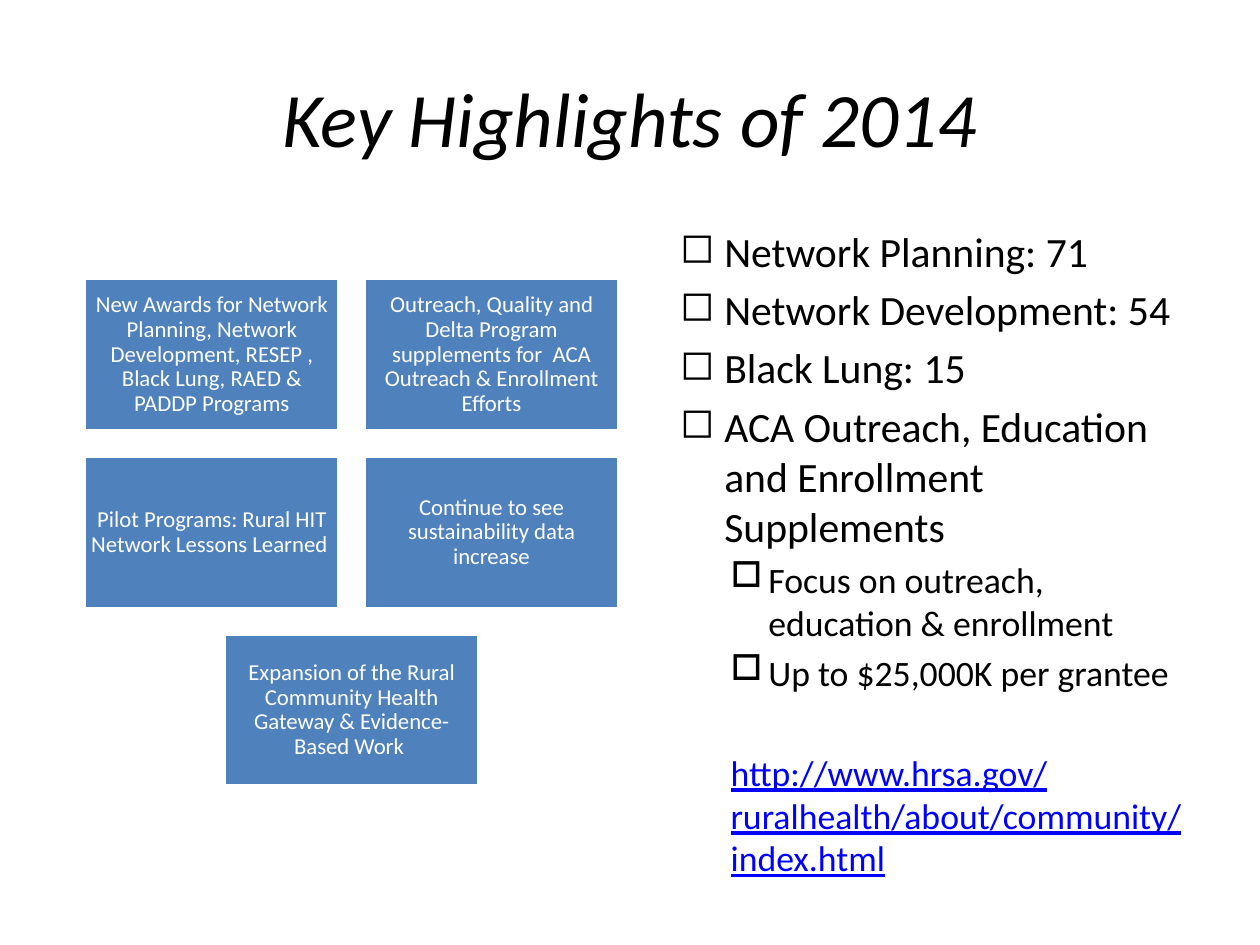
from dataclasses import dataclass

from lxml import etree
from pptx import Presentation
from pptx.dml.color import RGBColor
from pptx.enum import shapes, text
from pptx.oxml import ns
from pptx.util import Inches, Pt

BLACK = RGBColor(0x00, 0x00, 0x00)
WHITE = RGBColor(0xFF, 0xFF, 0xFF)
BLUE = RGBColor(0x4F, 0x81, 0xBD)
LINK_BLUE = RGBColor(0x00, 0x00, 0xFF)

BOX_WIDTH, BOX_HEIGHT, BOX_GAP = 2.02, 1.21, 0.2
GRID_LEFT, GRID_TOP, GRID_COLUMNS = 0.67, 2.21, 2
BOX_INSET = 0.05


@dataclass(frozen=True)
class Level:
    size: float
    margin: float
    hanging: float
    before: float
    bullet: str = ""
    color: RGBColor = BLACK
    underline: bool = False


@dataclass(frozen=True)
class Item:
    wording: str
    level: Level


MAIN = Level(23.8, 0.35, 0.35, 4.8, "◻")
DETAIL = Level(20.4, 0.7, 0.3, 4.1, "□")
ADDRESS = Level(20.4, 0.4, 0, 32.6, color=LINK_BLUE, underline=True)

HIGHLIGHTS = [
    "New Awards for Network Planning, Network Development, RESEP , "
    "Black Lung, RAED & PADDP Programs",
    "Outreach, Quality and Delta Program supplements for  ACA "
    "Outreach & Enrollment Efforts",
    "Pilot Programs: Rural HIT Network Lessons Learned  ",
    "Continue to see sustainability data increase",
    "Expansion of the Rural Community Health Gateway & Evidence-Based Work ",
]

AWARDS = [
    Item("Network Planning: 71", MAIN),
    Item("Network Development: 54", MAIN),
    Item("Black Lung: 15", MAIN),
    Item("ACA Outreach, Education and Enrollment Supplements", MAIN),
    Item("Focus on outreach, education & enrollment", DETAIL),
    Item("Up to $25,000K per grantee", DETAIL),
    Item("http://www.hrsa.gov/ruralhealth/about/community/index.html", ADDRESS),
]


def write(paragraph, wording: str, *, size: float, color: RGBColor = BLACK,
          align=text.PP_ALIGN.LEFT, italic: bool = False,
          underline: bool = False, spacing: float = 1.0,
          before: float = 0) -> None:
    paragraph.alignment = align
    paragraph.line_spacing = spacing
    paragraph.space_before = Pt(before)
    run = paragraph.add_run()
    run.text = wording
    run.font.name = "Calibri"
    run.font.size = Pt(size)
    run.font.color.rgb = color
    run.font.italic = italic
    run.font.underline = underline


def indent(paragraph, level: Level) -> None:
    properties = paragraph._p.get_or_add_pPr()
    properties.set("marL", str(Inches(level.margin)))
    properties.set("indent", str(-Inches(level.hanging)))
    if level.bullet:
        bullet = etree.SubElement(properties, ns.qn("a:buChar"))
        bullet.set("char", level.bullet)


def place_title(slide) -> None:
    heading = slide.shapes.title
    heading.left, heading.top = Inches(0.5), Inches(0.3)
    heading.width, heading.height = Inches(9), Inches(1.25)
    frame = heading.text_frame
    frame.vertical_anchor = text.MSO_ANCHOR.MIDDLE
    write(frame.paragraphs[0], "Key Highlights of 2014", size=44,
          align=text.PP_ALIGN.CENTER, italic=True)


def draw_highlight(slide, wording: str, left: float, top: float) -> None:
    box = slide.shapes.add_shape(
        shapes.MSO_SHAPE.RECTANGLE, Inches(left), Inches(top),
        Inches(BOX_WIDTH), Inches(BOX_HEIGHT))
    box.shadow.inherit = False
    box.fill.solid()
    box.fill.fore_color.rgb = BLUE
    box.line.color.rgb = WHITE
    box.line.width = Pt(2)
    frame = box.text_frame
    frame.word_wrap = True
    frame.vertical_anchor = text.MSO_ANCHOR.MIDDLE
    frame.margin_left = frame.margin_right = Inches(BOX_INSET)
    frame.margin_top = frame.margin_bottom = Inches(BOX_INSET)
    write(frame.paragraphs[0], wording, size=13, color=WHITE,
          align=text.PP_ALIGN.CENTER, spacing=0.9)


def draw_highlights(slide) -> None:
    step_x, step_y = BOX_WIDTH + BOX_GAP, BOX_HEIGHT + BOX_GAP
    for start in range(0, len(HIGHLIGHTS), GRID_COLUMNS):
        row = HIGHLIGHTS[start:start + GRID_COLUMNS]
        left = GRID_LEFT + (GRID_COLUMNS - len(row)) * step_x / 2
        top = GRID_TOP + start // GRID_COLUMNS * step_y
        for column, wording in enumerate(row):
            draw_highlight(slide, wording, left + column * step_x, top)


def draw_awards(slide) -> None:
    awards = slide.shapes.add_textbox(
        Inches(5.3), Inches(1.74), Inches(4.25), Inches(5))
    frame = awards.text_frame
    frame.word_wrap = True
    for index, item in enumerate(AWARDS):
        paragraph = frame.add_paragraph() if index else frame.paragraphs[0]
        level = item.level
        write(paragraph, item.wording, size=level.size, color=level.color,
              underline=level.underline, before=level.before)
        indent(paragraph, level)


def main() -> None:
    deck = Presentation()
    deck.slide_width, deck.slide_height = Inches(10), Inches(7.5)
    slide = deck.slides.add_slide(deck.slide_layouts.get_by_name("Title Only"))
    place_title(slide)
    draw_highlights(slide)
    draw_awards(slide)
    deck.save("out.pptx")


if __name__ == "__main__":
    main()
